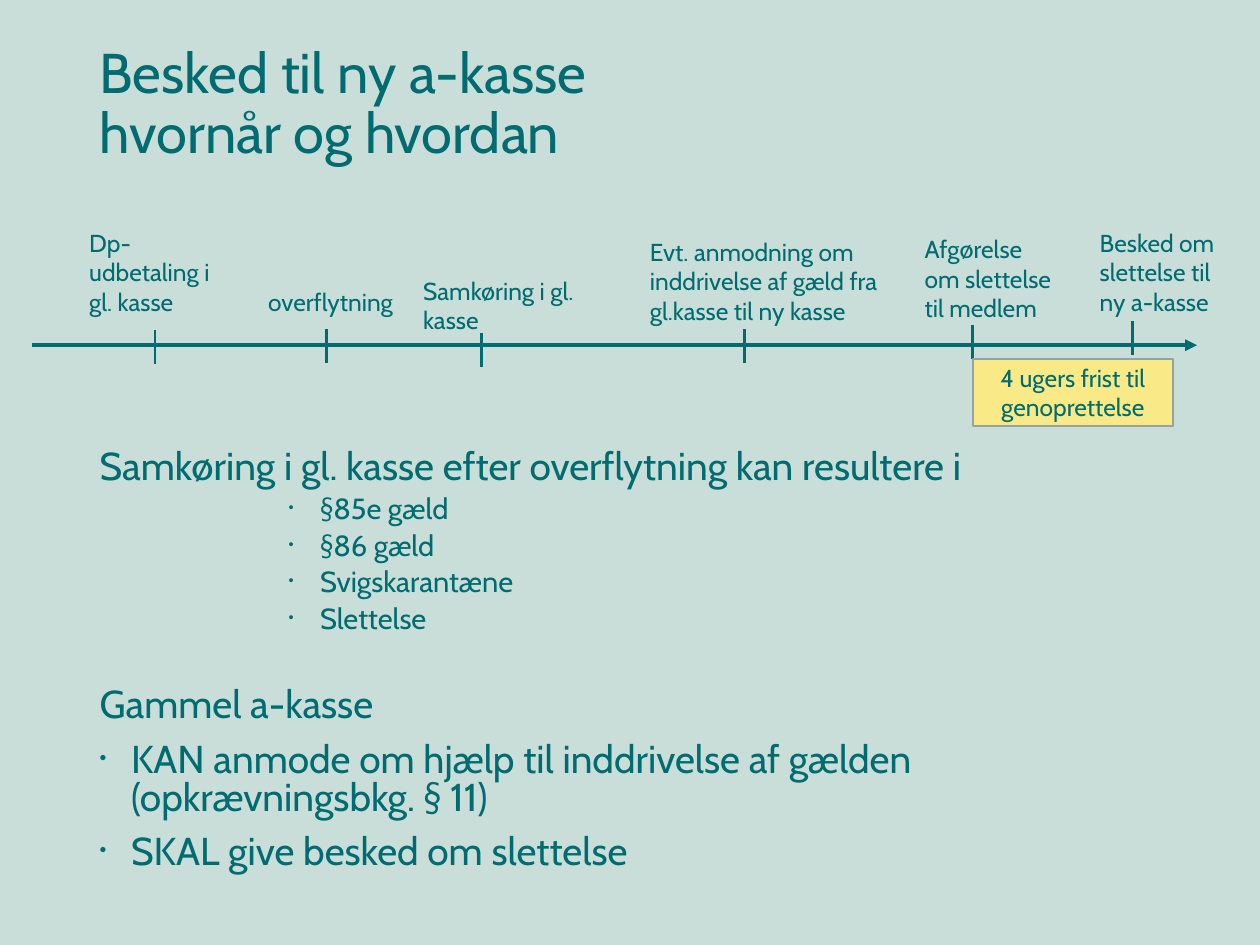
import dataclasses

import lxml.etree
import pptx
import pptx.dml.color
import pptx.enum.shapes
import pptx.enum.text
import pptx.oxml.ns
import pptx.util

Inches = pptx.util.Inches
Pt = pptx.util.Pt
qn = pptx.oxml.ns.qn


def rgb(value):
    return pptx.dml.color.RGBColor.from_string(value)


@dataclasses.dataclass(frozen=True)
class Theme:
    font: str = "Cabin"
    ink: str = "006B70"
    background: str = "C9DED9"
    note_fill: str = "F9EA87"
    note_line: str = "95A4A1"
    title_size: float = 32
    body_size: float = 22.2
    item_size: float = 16.6
    label_size: float = 14


@dataclasses.dataclass(frozen=True)
class Box:
    left: float
    top: float
    width: float
    height: float

    def inside(self, left, top, width, height):
        return Box(self.left + left, self.top + top, width, height)

    def lengths(self):
        return [Inches(value) for value in dataclasses.astuple(self)]


THEME = Theme()

# Label, its left, top, width and height, then tick x and top, all within the timeline
MILESTONES = [
    ("Dp-udbetaling i gl. kasse", 0.36, 0, 1.24, 0.81, 0.98, 0.86),
    ("overflytning", 1.78, 0.47, 1.24, 0.34, 2.34, 0.85),
    ("Samkøring i gl. kasse", 3.01, 0.38, 1.48, 0.57, 3.57, 0.88),
    ("Evt. anmodning om inddrivelse af gæld fra gl.kasse til ny kasse",
     4.81, 0.07, 2.31, 0.81, 5.66, 0.85),
    ("Afgørelse om slettelse til medlem", 6.99, 0.05, 1.24, 0.81, 7.47, 0.82),
    ("Besked om slettelse til ny a-kasse", 8.38, 0, 1.24, 0.81, 8.74, 0.79),
]
AXIS_Y = 0.98
TICK_HEIGHT = 0.27

# Text, kind of line, space before in points
BODY = [
    ("Samkøring i gl. kasse efter overflytning kan resultere i", "heading", 0),
    ("§85e gæld", "item", 5),
    ("§86 gæld", "item", 5),
    ("Svigskarantæne", "item", 5),
    ("Slettelse", "item", 5),
    ("Gammel a-kasse", "heading", 31),
    ("KAN anmode om hjælp til inddrivelse af gælden\v(opkrævningsbkg. § 11)", "point", 10),
    ("SKAL give besked om slettelse", "point", 10),
]

# Level, left margin in inches, size
LINE_KINDS = {
    "heading": (0, 0, THEME.body_size),
    "item": (3, 1.75, THEME.item_size),
    "point": (0, 0.25, THEME.body_size),
}


def format_spans(para, size):
    for span in para.runs:
        span.font.name = THEME.font
        span.font.size = Pt(size)
        span.font.color.rgb = rgb(THEME.ink)


def place(shape, box):
    shape.left, shape.top, shape.width, shape.height = box.lengths()


def set_bullet(para, margin):
    properties = para._p.get_or_add_pPr()
    properties.set("marL", str(Inches(margin)))
    properties.set("indent", str(Inches(-0.25 if margin else 0)))
    if not margin:
        lxml.etree.SubElement(properties, qn("a:buNone"))
        return
    lxml.etree.SubElement(properties, qn("a:buSzPct")).set("val", "50000")
    lxml.etree.SubElement(properties, qn("a:buFont")).set("typeface", "Arial")
    lxml.etree.SubElement(properties, qn("a:buChar")).set("char", "•")


def add_line(page, start, end, weight, arrow=False):
    ends = [Inches(value) for value in (*start, *end)]
    line = page.shapes.add_connector(pptx.enum.shapes.MSO_CONNECTOR.STRAIGHT, *ends)
    line.line.color.rgb = rgb(THEME.ink)
    line.line.width = Pt(weight)
    if arrow:
        tail = lxml.etree.SubElement(line.line._get_or_add_ln(), qn("a:tailEnd"))
        tail.set("type", "triangle")
    lxml.etree.SubElement(line._element.spPr, qn("a:effectLst"))


def add_title(page, box):
    title = page.shapes.title
    place(title, box)
    frame = title.text_frame
    frame.text = "Besked til ny a-kasse\vhvornår og hvordan"
    frame.vertical_anchor = pptx.enum.text.MSO_ANCHOR.MIDDLE
    frame.auto_size = pptx.enum.text.MSO_AUTO_SIZE.NONE
    para = frame.paragraphs[0]
    para.alignment = pptx.enum.text.PP_ALIGN.LEFT
    para.line_spacing = 0.9
    format_spans(para, THEME.title_size)


def add_body(page, box):
    body = page.placeholders[1]
    place(body, box)
    frame = body.text_frame
    frame.auto_size = pptx.enum.text.MSO_AUTO_SIZE.NONE
    for index, (text, kind, space) in enumerate(BODY):
        level, margin, size = LINE_KINDS[kind]
        para = frame.add_paragraph() if index else frame.paragraphs[0]
        para.text = text
        para.level = level
        set_bullet(para, margin)
        para.line_spacing = 0.8
        para.space_before = Pt(space)
        format_spans(para, size)


def add_label(page, box, text):
    label = page.shapes.add_textbox(*box.lengths())
    frame = label.text_frame
    frame.word_wrap = True
    frame.auto_size = pptx.enum.text.MSO_AUTO_SIZE.SHAPE_TO_FIT_TEXT
    frame.text = text
    format_spans(frame.paragraphs[0], THEME.label_size)


def add_deadline(page, box):
    note = page.shapes.add_shape(pptx.enum.shapes.MSO_SHAPE.RECTANGLE, *box.lengths())
    note.shadow.inherit = False
    note.fill.solid()
    note.fill.fore_color.rgb = rgb(THEME.note_fill)
    note.line.color.rgb = rgb(THEME.note_line)
    note.line.width = Pt(1)
    frame = note.text_frame
    frame.word_wrap = True
    frame.vertical_anchor = pptx.enum.text.MSO_ANCHOR.MIDDLE
    frame.text = "4 ugers frist til genoprettelse"
    frame.paragraphs[0].alignment = pptx.enum.text.PP_ALIGN.CENTER
    format_spans(frame.paragraphs[0], THEME.label_size)


def add_timeline(page, box):
    # Axis
    axis_y = box.top + AXIS_Y
    add_line(page, (box.left, axis_y), (box.left + box.width, axis_y), 2.25, arrow=True)
    # Milestones
    for text, left, top, width, height, tick_x, tick_top in MILESTONES:
        add_label(page, box.inside(left, top, width, height), text)
        x, y = box.left + tick_x, box.top + tick_top
        add_line(page, (x, y), (x, y + TICK_HEIGHT), 1.5)
    # Deadline that runs from the decision
    add_deadline(page, box.inside(7.47, 1.09, 1.59, 0.53))


def main():
    deck = pptx.Presentation()
    deck.slide_width, deck.slide_height = Inches(10), Inches(7.5)
    page = deck.slides.add_slide(deck.slide_layouts[1])
    page.background.fill.solid()
    page.background.fill.fore_color.rgb = rgb(THEME.background)
    add_title(page, Box(0.69, 0.11, 6.5, 1.45))
    add_body(page, Box(0.69, 3.53, 8.62, 3.65))
    add_timeline(page, Box(0.25, 1.76, 9.25, 1.62))
    deck.save("out.pptx")


if __name__ == "__main__":
    main()
